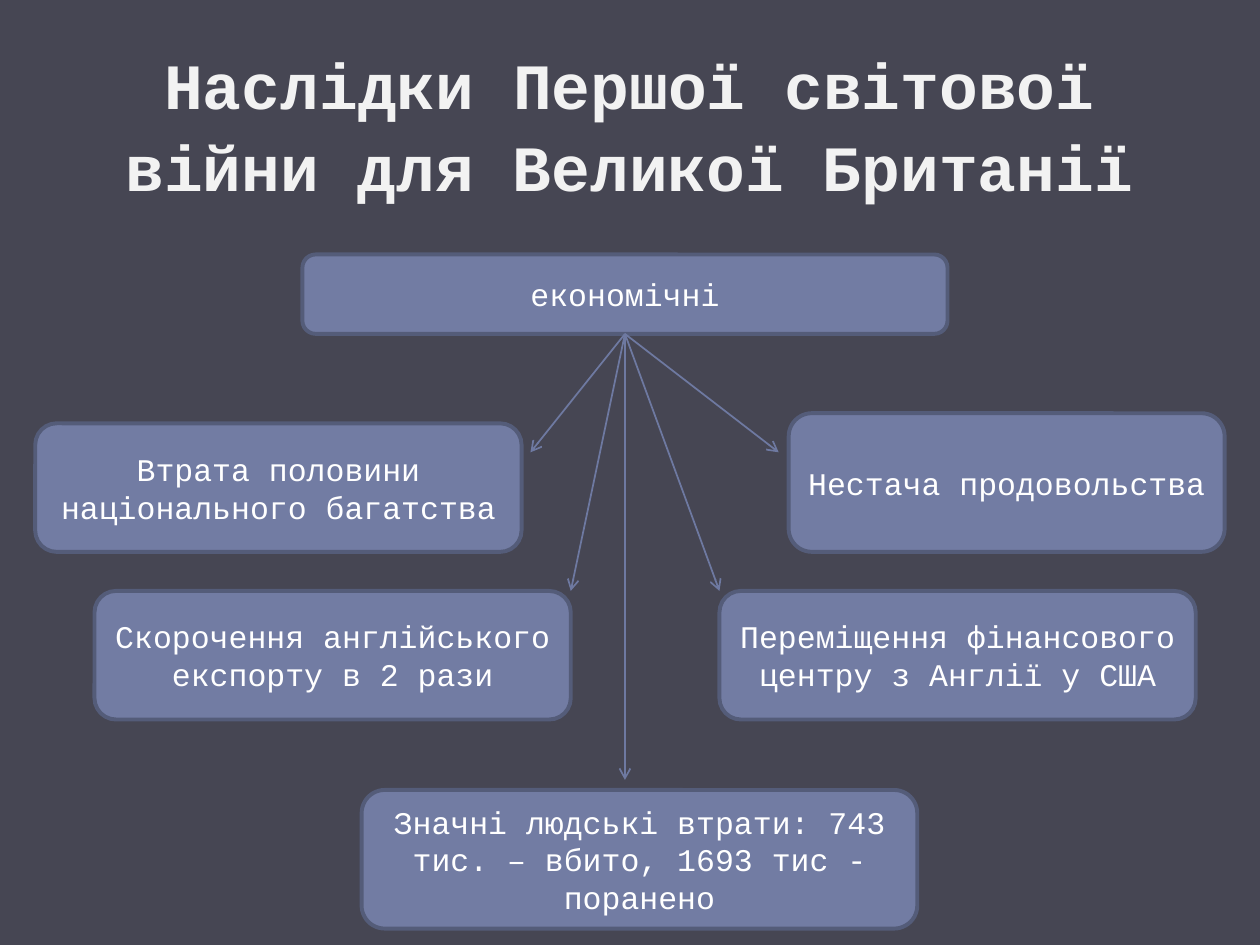
from dataclasses import dataclass

from lxml.etree import SubElement
from pptx import Presentation
from pptx.dml.color import RGBColor
from pptx.enum.shapes import MSO_CONNECTOR, MSO_SHAPE
from pptx.enum.text import MSO_ANCHOR, PP_ALIGN
from pptx.oxml.ns import qn
from pptx.util import Inches, Pt

TITLE = "Наслідки Першої світової війни для Великої Британії"
TITLE_AREA = (0.5, 0.3, 9, 1.25)
ROOT = ("економічні", (2.4, 2.02, 5.12, 0.63))

# text, box area (left, top, width, height), arrow tip
EFFECTS = [
    ("Втрата половини національного багатства", (0.28, 3.36, 3.86, 1.02), (4.21, 3.59)),
    ("Нестача продовольства", (6.26, 3.28, 3.46, 1.1), (6.18, 3.59)),
    ("Скорочення англійського експорту в 2 рази", (0.75, 4.69, 3.78, 1.02), (4.53, 4.69)),
    ("Переміщення фінансового центру з Англії у США", (5.71, 4.69, 3.78, 1.02), (5.71, 4.69)),
    ("Значні людські втрати: 743 тис. – вбито, 1693 тис - поранено",
     (2.87, 6.27, 4.41, 1.1), (4.96, 6.19)),
]


@dataclass(frozen=True)
class Theme:
    font: str = "Courier New"
    title_size: float = 36.9
    body_size: float = 18
    background: str = "464653"
    title: str = "F2F2F2"
    text: str = "FFFFFF"
    fill: str = "727CA3"
    border: str = "545C79"
    arrow: str = "6E79A1"


THEME = Theme()


def color(value):
    return RGBColor.from_string(value)


def write(shape, text, *, size, tone, bold=False, spacing=1.0):
    frame = shape.text_frame
    frame.word_wrap = True
    frame.vertical_anchor = MSO_ANCHOR.MIDDLE
    frame.margin_left = frame.margin_right = Inches(0.08)
    para = frame.paragraphs[0]
    para.alignment = PP_ALIGN.CENTER
    para.line_spacing = spacing
    span = para.add_run()
    span.text = text
    span.font.name = THEME.font
    span.font.size = Pt(size)
    span.font.bold = bold
    span.font.color.rgb = color(tone)


def add_box(page, text, area):
    box = page.shapes.add_shape(MSO_SHAPE.ROUNDED_RECTANGLE, *map(Inches, area))
    box.shadow.inherit = False
    box.fill.solid()
    box.fill.fore_color.rgb = color(THEME.fill)
    box.line.color.rgb = color(THEME.border)
    box.line.width = Pt(2.25)
    write(box, text, size=THEME.body_size, tone=THEME.text)
    return box


def add_arrow(page, source, tip):
    """Draw an arrow from the bottom middle of the source box to the tip."""
    end = [Inches(value) for value in tip]
    arrow = page.shapes.add_connector(MSO_CONNECTOR.STRAIGHT, *end, *end)
    arrow.begin_connect(source, 2)
    arrow.line.color.rgb = color(THEME.arrow)
    arrow.line.width = Pt(1)
    SubElement(arrow.line._get_or_add_ln(), qn("a:tailEnd"), type="arrow")
    SubElement(arrow._element.spPr, qn("a:effectLst"))


def main():
    deck = Presentation()
    deck.slide_width, deck.slide_height = Inches(10), Inches(7.5)
    page = deck.slides.add_slide(deck.slide_layouts[5])
    page.background.fill.solid()
    page.background.fill.fore_color.rgb = color(THEME.background)

    title = page.shapes.title
    title.left, title.top, title.width, title.height = map(Inches, TITLE_AREA)
    write(title, TITLE, size=THEME.title_size, tone=THEME.title, bold=True, spacing=1.05)
    title.text_frame.margin_top, title.text_frame.margin_bottom = Inches(0.1), 0

    root = add_box(page, *ROOT)
    for text, area, _ in EFFECTS:
        add_box(page, text, area)
    for _, _, tip in EFFECTS:
        add_arrow(page, root, tip)

    deck.save("out.pptx")


if __name__ == "__main__":
    main()
